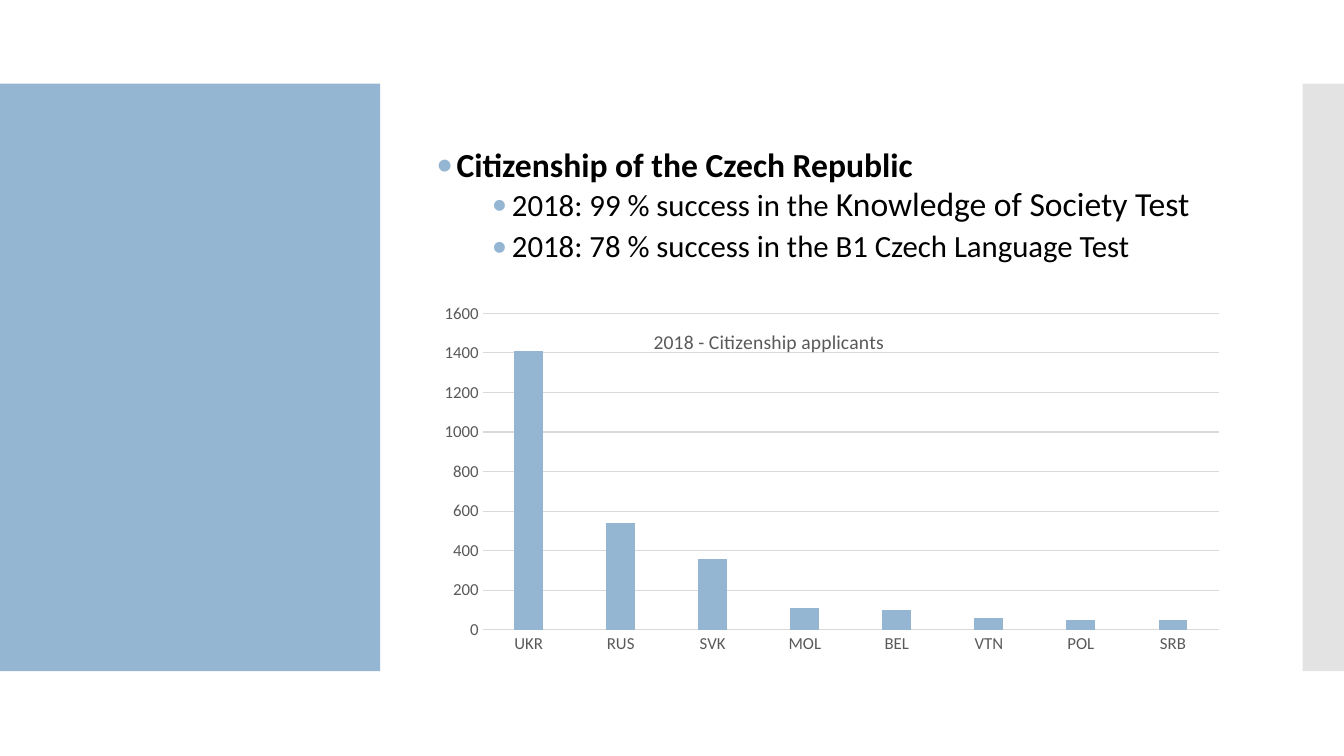
from dataclasses import dataclass

from lxml.etree import SubElement
from pptx import Presentation
from pptx.chart.data import CategoryChartData
from pptx.dml.color import RGBColor
from pptx.enum.chart import XL_CHART_TYPE, XL_TICK_MARK
from pptx.enum.shapes import MSO_SHAPE
from pptx.enum.text import MSO_ANCHOR
from pptx.oxml.ns import qn
from pptx.util import Inches, Pt


@dataclass(frozen=True)
class Theme:
    font: str = "Calibri"
    accent: str = "94B6D2"
    side: str = "C8C8C8"
    text: str = "000000"
    muted: str = "595959"
    grid: str = "D9D9D9"
    heading: int = 24
    body: int = 22
    chart_title: int = 14
    axis: int = 12
    chart: int = 10


THEME = Theme()
APPLICANTS = {"UKR": 1410, "RUS": 540, "SVK": 360, "MOL": 110,
              "BEL": 100, "VTN": 60, "POL": 50, "SRB": 50}
BULLETS = [
    (0, [("Citizenship of the Czech Republic", THEME.heading, True)]),
    (1, [("2018: 99 % success in the ", THEME.body, False),
         ("Knowledge of Society Test", THEME.heading, False)]),
    (1, [("2018: 78 % success in the B1 Czech Language Test", THEME.body, False)]),
]


def rgb(color):
    return RGBColor.from_string(color)


def set_font(font, size, color, bold=False):
    font.name = THEME.font
    font.size = Pt(size)
    font.bold = bold
    font.color.rgb = rgb(color)


def add_text(p, text, *, size, color=THEME.text, bold=False):
    r = p.add_run()
    r.text = text
    set_font(r.font, size, color, bold)


def add_panel(slide, box, color, alpha=None):
    sp = slide.shapes.add_shape(MSO_SHAPE.RECTANGLE, *map(Inches, box))
    sp.shadow.inherit = False
    sp.fill.solid()
    sp.fill.fore_color.rgb = rgb(color)
    sp.line.fill.background()
    if alpha is not None:
        clr = sp._element.spPr.find(qn("a:solidFill"))[0]
        SubElement(clr, qn("a:alpha"), val=str(alpha * 1000))


def set_bullet(p, indent):
    pPr = p._p.get_or_add_pPr()
    pPr.set("marL", str(Inches(indent)))
    pPr.set("indent", str(Inches(-0.2)))
    SubElement(SubElement(pPr, qn("a:buClr")), qn("a:srgbClr"), val=THEME.accent)
    SubElement(pPr, qn("a:buFont"), typeface=THEME.font)
    SubElement(pPr, qn("a:buChar"), char="•")


def add_bullets(slide, box):
    tf = slide.shapes.add_textbox(*map(Inches, box)).text_frame
    tf.word_wrap = True
    tf.vertical_anchor = MSO_ANCHOR.MIDDLE
    for i, (level, runs) in enumerate(BULLETS):
        p = tf.add_paragraph() if i else tf.paragraphs[0]
        p.level = level
        p.line_spacing = 0.9
        p.space_before = Pt(2.5 if level else 12)
        p.space_after = Pt(2.5 if level else 0)
        set_bullet(p, 0.75 if level else 0.2)
        for text, size, bold in runs:
            add_text(p, text, size=size, bold=bold)


def set_layout(parent, position, **values):
    layout = parent.find(qn("c:layout"))
    if layout is None:
        layout = SubElement(parent, qn("c:layout"))
        parent.insert(position, layout)
    manual = SubElement(layout, qn("c:manualLayout"))
    for tag, val in values.items():
        SubElement(manual, qn(f"c:{tag}"), val=str(val))


def style_axis(axis):
    axis.major_tick_mark = axis.minor_tick_mark = XL_TICK_MARK.NONE
    set_font(axis.tick_labels.font, THEME.axis, THEME.muted)


def style_line(line):
    line.color.rgb = rgb(THEME.grid)
    line.width = Pt(0.75)


def add_applicants_chart(slide, box):
    data = CategoryChartData()
    data.categories = list(APPLICANTS)
    data.add_series("Series 1", list(APPLICANTS.values()))
    chart = slide.shapes.add_chart(
        XL_CHART_TYPE.COLUMN_CLUSTERED, *map(Inches, box), data).chart
    set_font(chart.font, THEME.chart, THEME.text)
    chart.has_legend = False

    tf = chart.chart_title.text_frame
    add_text(tf.paragraphs[0], "2018 - Citizenship applicants",
             size=THEME.chart_title, color=THEME.muted)
    title = chart._chartSpace.chart.find(qn("c:title"))
    title.find(qn("c:overlay")).set("val", "1")
    set_layout(title, 1, xMode="edge", yMode="edge", x=0.29, y=0.06)

    plot = chart.plots[0]
    plot.gap_width = 219
    plot.overlap = -27
    plot.vary_by_categories = False
    fill = plot.series[0].format.fill
    fill.solid()
    fill.fore_color.rgb = rgb(THEME.accent)
    set_layout(chart._chartSpace.chart.plotArea, 0, layoutTarget="inner",
               xMode="edge", yMode="edge", x=0.09, y=0.03, w=0.88, h=0.86)

    style_axis(chart.category_axis)
    style_line(chart.category_axis.format.line)
    values = chart.value_axis
    style_axis(values)
    values.minimum_scale, values.maximum_scale, values.major_unit = 0, 1600, 200
    values.format.line.fill.background()
    style_line(values.major_gridlines.format.line)


def main():
    prs = Presentation()
    prs.slide_width, prs.slide_height = Inches(13.33), Inches(7.5)
    slide = prs.slides.add_slide(prs.slide_layouts[6])
    add_panel(slide, (0, 0.83, 3.77, 5.83), THEME.accent)
    add_panel(slide, (12.92, 0.83, 0.41, 5.83), THEME.side, alpha=50)
    add_bullets(slide, (4.23, 0.94, 8, 2.21))
    add_applicants_chart(slide, (4.04, 3, 8.3, 3.65))
    prs.save("out.pptx")


if __name__ == "__main__":
    main()
